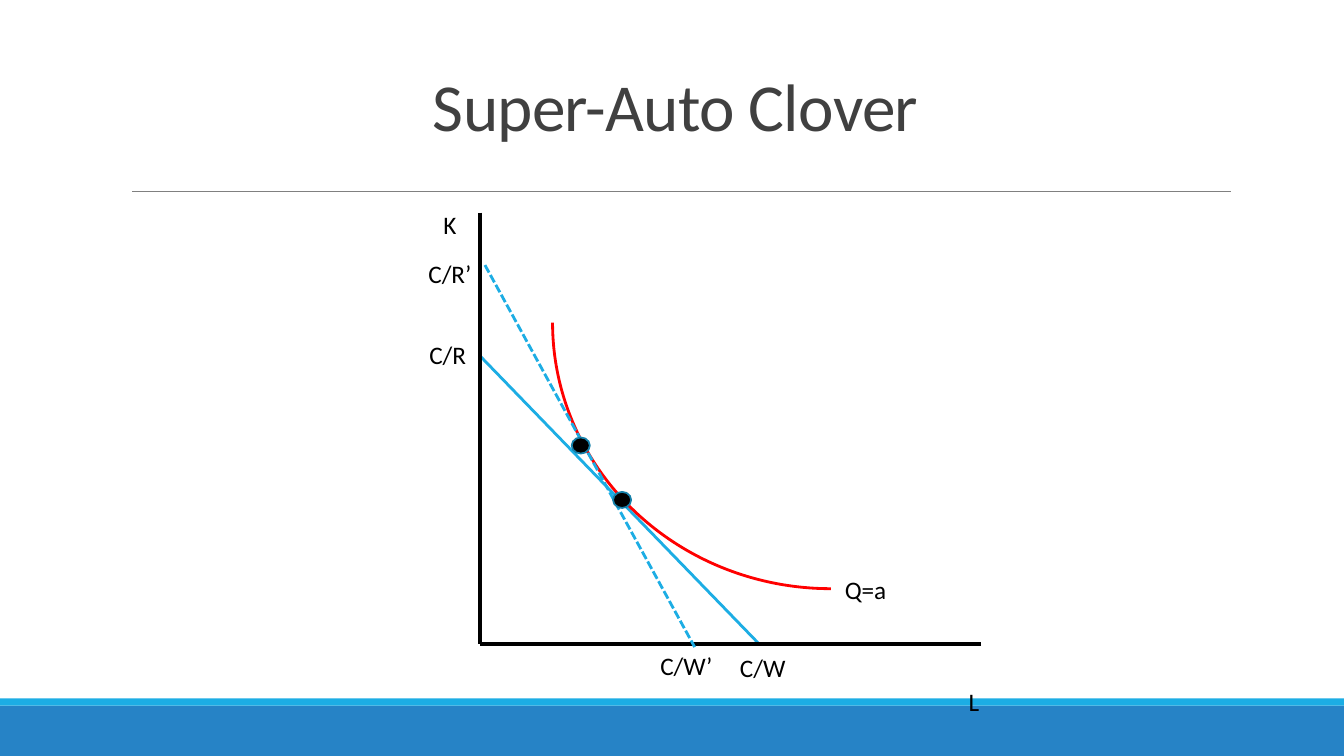
from lxml import etree
from pptx import Presentation
from pptx.dml.color import RGBColor
from pptx.enum.dml import MSO_LINE
from pptx.enum.shapes import MSO_CONNECTOR, MSO_SHAPE
from pptx.enum.text import MSO_ANCHOR, MSO_AUTO_SIZE, PP_ALIGN
from pptx.oxml.ns import qn
from pptx.util import Pt

PX = 9144  # 100 px to the inch
WIDE, HIGH = 1333, 750
FONT = "Calibri"
BLACK, CYAN, BLUE, RED = "000000", "1CADE4", "2683C6", "FF0000"
GREY, DARK, TEAL = "808080", "404040", "1580A9"

RECT, ARC, OVAL = MSO_SHAPE.RECTANGLE, MSO_SHAPE.ARC, MSO_SHAPE.OVAL
STRAIGHT = MSO_CONNECTOR.STRAIGHT
DASH = MSO_LINE.SQUARE_DOT
LEFT, CENTER = PP_ALIGN.LEFT, PP_ALIGN.CENTER
TOP, MIDDLE = MSO_ANCHOR.TOP, MSO_ANCHOR.MIDDLE
FIXED = MSO_AUTO_SIZE.NONE


def px(*sizes):
    return [size * PX for size in sizes]


def rgb(code):
    return RGBColor.from_string(code)


def stroke(line, color, width):
    line.color.rgb = rgb(color)
    line.width = Pt(width)


def shape(parts, kind, box, fill=None, line=None, width=1):
    item = parts.add_shape(kind, *px(*box))
    item.shadow.inherit = False
    if fill:
        item.fill.solid()
        item.fill.fore_color.rgb = rgb(fill)
    else:
        item.fill.background()
    if line:
        stroke(item.line, line, width)
    else:
        item.line.fill.background()
    return item


def rule(parts, start, end, color, width, dash=None):
    item = parts.add_connector(STRAIGHT, *px(*start, *end))
    stroke(item.line, color, width)
    if dash:
        item.line.dash_style = dash
    etree.SubElement(item._element.spPr, qn("a:effectLst"))


def write(item, words, size=18, color=BLACK, align=LEFT, anchor=TOP,
          lines=None, space=None):
    frame = item.text_frame
    frame.word_wrap = True
    frame.auto_size = FIXED
    frame.vertical_anchor = anchor
    para = frame.paragraphs[0]
    para.alignment = align
    if lines:
        para.line_spacing = lines
    run = para.add_run()
    run.text = words
    run.font.name = FONT
    run.font.size = Pt(size)
    run.font.color.rgb = rgb(color)
    if space:
        run._r.get_or_add_rPr().set("spc", str(space))


def label(parts, words, box):
    write(parts.add_textbox(*px(*box)), words)


def footer(parts, x, y, wide, high):
    band = 7
    shape(parts, RECT, (x, y + band, wide, high - band), BLUE)
    shape(parts, RECT, (x, y, wide, band), CYAN)


def header(parts, x, y, wide, high):
    title = parts.title
    title.left, title.top, title.width, title.height = px(x, y, wide, high)
    write(title, "Super-Auto Clover", size=48, color=DARK, align=CENTER,
          anchor=MIDDLE, lines=0.85, space=-50)
    base = y + high
    rule(parts, (x + 11, base), (x + wide + 1, base), GREY, 0.5)


def graph(parts, x, y, wide, high):
    """Draw axes along the left and bottom of the box, then both cost lines."""
    base = y + high
    rule(parts, (x + 1, y + 143), (x + 277, base), CYAN, 2)
    rule(parts, (x, y), (x, base), BLACK, 3)
    rule(parts, (x + wide, base), (x, base), BLACK, 3)
    curve = shape(parts, ARC, (x + 72, y - 155, 552, 528), line=RED, width=2)
    curve.rotation = 180
    rule(parts, (x + 5, y + 52), (x + 213, base + 3), CYAN, 2, DASH)
    for left, top in (91, 223), (132, 277):
        shape(parts, OVAL, (x + left, y + top, 18, 16), BLACK, TEAL, 1.25)
    for words, left, top, width in (
        ("K", -46, -8, 51),
        ("C/R’", -61, 40, 75),
        ("C/R", -60, 121, 66),
        ("C/W’", 169, 429, 79),
        ("C/W", 248, 431, 77),
        ("Q=a", 352, 354, 129),
        ("L", 475, 465, 50),
    ):
        label(parts, words, (x + left, y + top, width, 35))


def main():
    deck = Presentation()
    deck.slide_width, deck.slide_height = px(WIDE, HIGH)
    slide = deck.slides.add_slide(deck.slide_layouts[5])
    parts = slide.shapes
    footer(parts, 0, 693, WIDE, 57)
    header(parts, 120, 31, 1100, 159)
    graph(parts.add_group_shape().shapes, 476, 211, 497, 428)
    deck.save("out.pptx")


if __name__ == "__main__":
    main()
